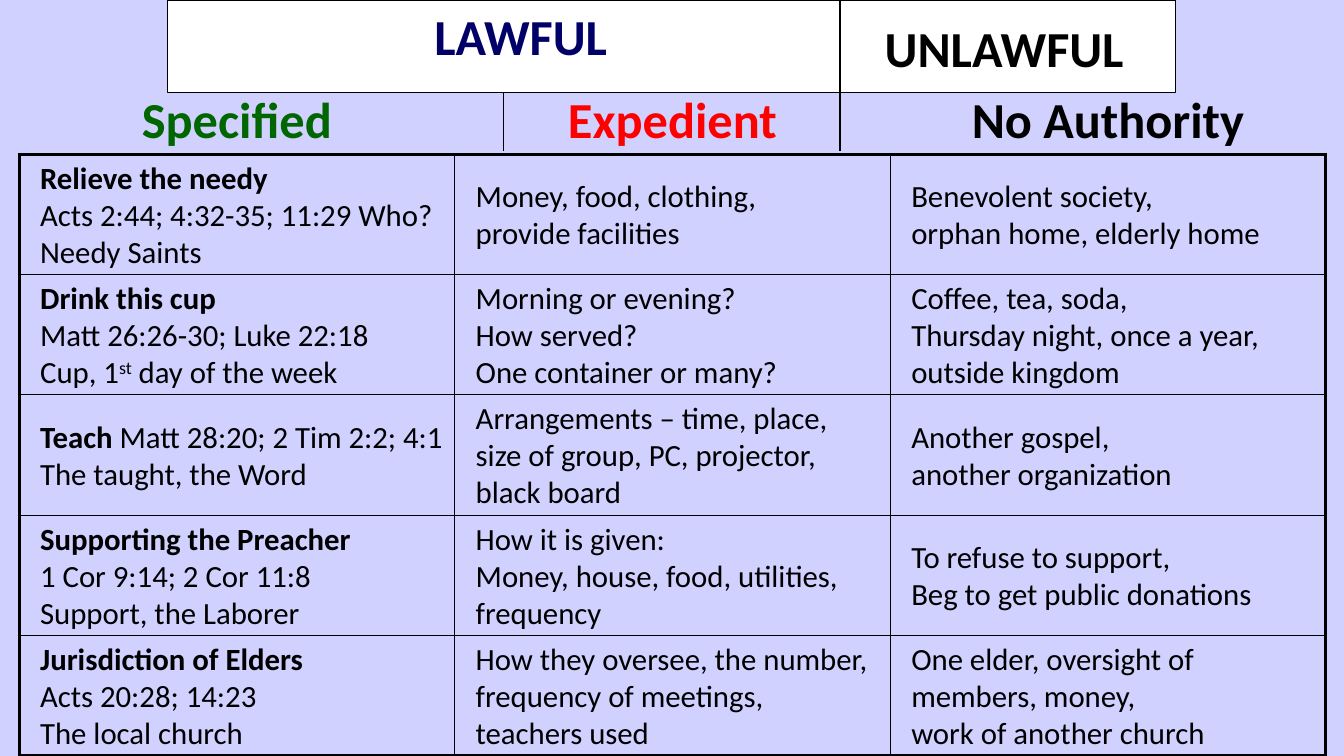
import pptx
import pptx.dml.color
import pptx.enum.shapes
import pptx.enum.text
import pptx.oxml
import pptx.oxml.ns
import pptx.util
import lxml.etree

Inches, Pt = pptx.util.Inches, pptx.util.Pt
RGB = pptx.dml.color.RGBColor.from_string
COLORS = {"lavender": "D1D1FF", "white": "FFFFFF", "black": "000000",
          "navy": "000066", "green": "006600", "red": "FF0000"}
WIDTH, HEIGHT = 13.33, 7.5
BANNER_HEIGHT = 0.92
TABLE_LEFT, TABLE_TOP = 0.19, 1.53
COLUMN, ROW = 4.32, 1.194
TEXT_INSET = 0.11
TEXT_WIDTHS = [4.2, 4.15, 4.2]

presentation = pptx.Presentation()
presentation.slide_width, presentation.slide_height = Inches(WIDTH), Inches(HEIGHT)
slide = presentation.slides.add_slide(presentation.slide_layouts[6])
slide.background.fill.solid()
slide.background.fill.fore_color.rgb = RGB(COLORS["lavender"])


def add_text(box, paragraphs, size, color="black", centred=False, wrap=True):
    """Write paragraphs of (text, style) runs; style is "", "bold" or "super"."""
    left, top, width, height = map(Inches, box)
    frame = slide.shapes.add_textbox(left, top, width, height).text_frame
    frame.word_wrap = wrap
    if wrap:
        frame.auto_size = pptx.enum.text.MSO_AUTO_SIZE.SHAPE_TO_FIT_TEXT
    for index, runs in enumerate(paragraphs):
        paragraph = frame.add_paragraph() if index else frame.paragraphs[0]
        if centred:
            paragraph.alignment = pptx.enum.text.PP_ALIGN.CENTER
        for text, style in runs:
            for line_index, line in enumerate(text.split("\n")):
                if line_index:
                    paragraph.add_line_break()
                run = paragraph.add_run()
                run.text = line
                run.font.name, run.font.size = "Calibri", Pt(size)
                run.font.bold = style == "bold"
                run.font.color.rgb = RGB(COLORS[color])
                if style == "super":
                    run.font._element.set("baseline", "30000")


# Grid with a heavy outer frame and thin inner rules
rows, columns = 5, 3
grid = slide.shapes.add_table(rows, columns, Inches(TABLE_LEFT), Inches(TABLE_TOP),
                              Inches(columns * COLUMN), Inches(rows * ROW)).table
grid.first_row = grid.horz_banding = False
for r in range(rows):
    grid.rows[r].height = Inches(ROW)
    for c in range(columns):
        grid.columns[c].width = Inches(COLUMN)
        cell = grid.cell(r, c)
        outer_edges = {"L": c == 0, "R": c == columns - 1, "T": r == 0, "B": r == rows - 1}
        for side, is_outer in outer_edges.items():
            cell._tc.get_or_add_tcPr().append(pptx.oxml.parse_xml(
                f'<a:ln{side} {pptx.oxml.ns.nsdecls("a")} w="{Pt(2.25 if is_outer else 1)}">'
                f'<a:solidFill><a:srgbClr val="{COLORS["black"]}"/></a:solidFill></a:ln{side}>'))
        cell.fill.background()

# Banner over the middle three quarters of the slide
banner = slide.shapes.add_shape(
    pptx.enum.shapes.MSO_SHAPE.RECTANGLE, Inches(WIDTH / 8), 0,
    Inches(WIDTH * 3 / 4), Inches(BANNER_HEIGHT))
banner.shadow.inherit = False
banner.fill.solid()
banner.fill.fore_color.rgb = RGB(COLORS["white"])
banner.line.color.rgb = RGB(COLORS["black"])
banner.line.width = Pt(0.75)

for eighths, top, bottom in [(3, BANNER_HEIGHT, 1.5), (5, BANNER_HEIGHT, 1.5),
                             (5, 0, BANNER_HEIGHT)]:
    x = Inches(WIDTH * eighths / 8)
    divider = slide.shapes.add_connector(
        pptx.enum.shapes.MSO_CONNECTOR.STRAIGHT, x, Inches(top), x, Inches(bottom))
    divider.line.color.rgb = RGB(COLORS["black"])
    divider.line.width = Pt(0.75)
    lxml.etree.SubElement(divider._element.spPr, pptx.oxml.ns.qn("a:effectLst"))

add_text((2.08, 0, 6.17, 0.88), [[("LAWFUL", "bold")]], 36, "navy", True, False)
add_text((8.42, 0.12, 3.08, 0.71), [[("UNLAWFUL", "bold")]], 36, "black", True, False)

headings = [("Specified", "green"), ("Expedient", "red"), ("No Authority", "black")]
for c, (heading, color) in enumerate(headings):
    add_text((TABLE_LEFT + c * COLUMN, 0.83, COLUMN, 0.7),
             [[(heading, "bold")]], 36, color, True)

# Each entry: number of lines it fills, then its paragraphs
topics = [
    [(3, [[("Relieve the needy", "bold")],
          [("Acts 2:44; 4:32-35; 11:29 Who? Needy Saints", "")]]),
     (2, [[("Money, food, clothing,\nprovide facilities", "")]]),
     (2, [[("Benevolent society,\norphan home, elderly home", "")]])],
    [(3, [[("Drink this cup", "bold")],
          [("Matt 26:26-30; Luke 22:18\nCup, 1", ""), ("st", "super"),
           (" day of the week", "")]]),
     (3, [[("Morning or evening?", "")], [("How served?", "")],
          [("One container or many?", "")]]),
     (3, [[("Coffee, tea, soda,\nThursday night, once a year, outside kingdom", "")]])],
    [(2, [[("Teach ", "bold"), ("Matt 28:20; 2 Tim 2:2; 4:1", "")],
          [("The taught, the Word", "")]]),
     (3, [[("Arrangements – time, place, size of group, PC, projector, black board", "")]]),
     (2, [[("Another gospel,", "")], [("another organization", "")]])],
    [(3, [[("Supporting the Preacher", "bold")],
          [("1 Cor 9:14; 2 Cor 11:8\nSupport, the Laborer", "")]]),
     (3, [[("How it is given:", "")], [("Money, house, food, utilities, frequency", "")]]),
     (2, [[("To refuse to support,", "")], [("Beg to get public donations", "")]])],
    [(3, [[("Jurisdiction of Elders", "bold")], [("Acts 20:28; 14:23", "")],
          [("The local church", "")]]),
     (3, [[("How they oversee, the number, frequency of meetings,\nteachers used", "")]]),
     (3, [[("One elder, oversight of members, money,", "")],
          [("work of another church", "")]])],
]
for r, topic in enumerate(topics):
    for c, (line_count, paragraphs) in enumerate(topic):
        height = 0.1 + 0.37 * line_count
        top = TABLE_TOP + (r + 0.5) * ROW - height / 2
        left = TABLE_LEFT + c * COLUMN + TEXT_INSET
        add_text((left, top, TEXT_WIDTHS[c], height), paragraphs, 22)

presentation.save("out.pptx")
